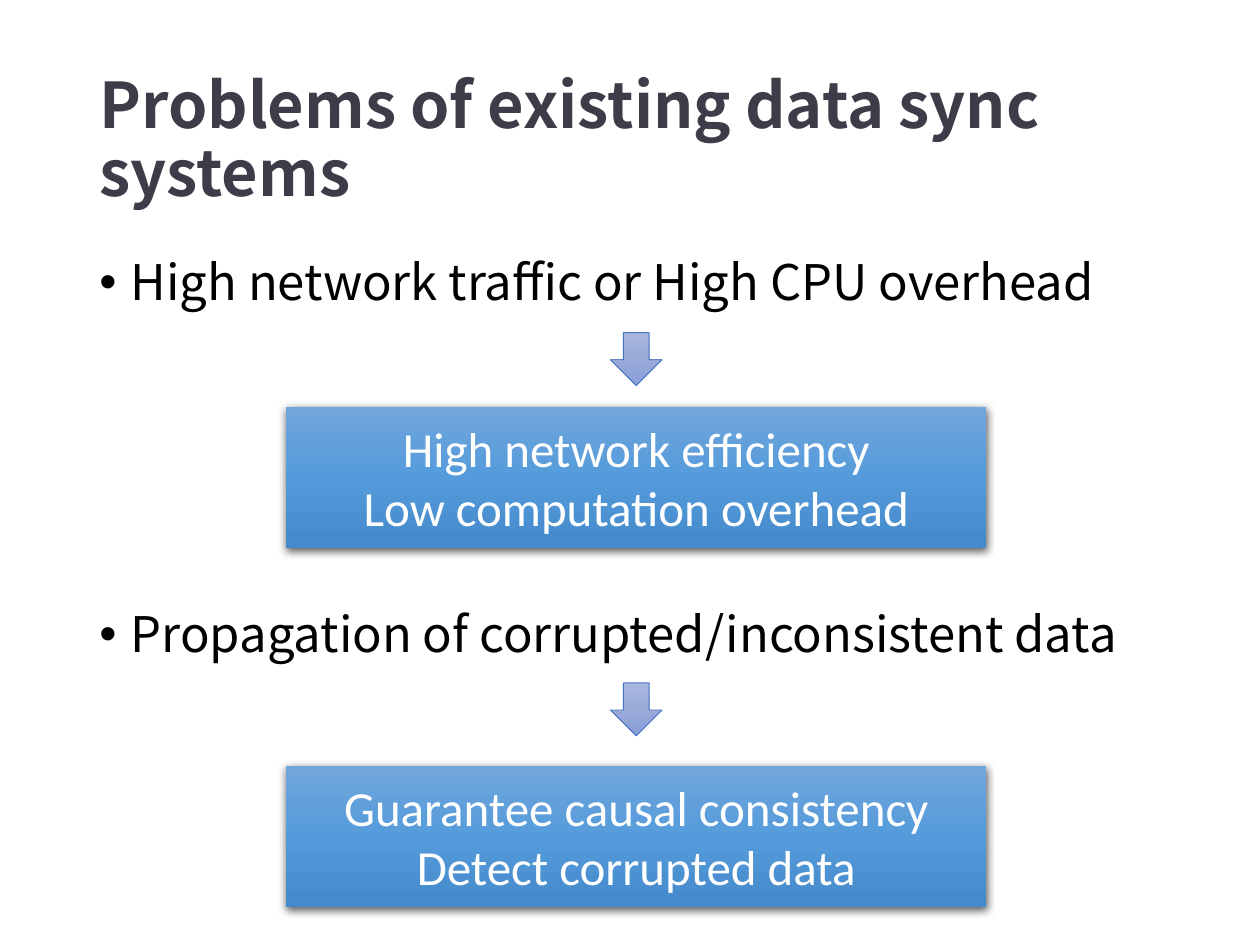
import copy

import pptx
import pptx.dml.color
import pptx.enum.shapes
import pptx.enum.text
import pptx.oxml
import pptx.oxml.ns
import pptx.util

Inches, Pt = pptx.util.Inches, pptx.util.Pt
SHAPE = pptx.enum.shapes.MSO_SHAPE
ANCHOR = pptx.enum.text.MSO_ANCHOR
qn = pptx.oxml.ns.qn
HEADING_FONT = "Noto Sans CJK SC"


def color(value):
    return pptx.dml.color.RGBColor.from_string(value)


def add_gradient_shape(kind, left, top, width, height, colors):
    """Add a shape with a three-stop gradient from top to bottom."""
    shape = page.shapes.add_shape(
        kind, Inches(left), Inches(top), Inches(width), Inches(height))
    shape.shadow.inherit = False
    shape.fill.gradient()
    shape.fill.gradient_angle = 270
    stop_list = shape._element.spPr.find(".//" + qn("a:gsLst"))
    stop_list.append(copy.deepcopy(stop_list[-1]))
    for index, stop in enumerate(shape.fill.gradient_stops):
        stop.position = index / 2
        stop.color.rgb = color(colors[index])
    return shape


deck = pptx.Presentation()
deck.slide_width, deck.slide_height = Inches(10), Inches(7.5)
page = deck.slides.add_slide(deck.slide_layouts[6])

margin, text_width = 0.69, 8.62
arrow_width, arrow_height = 0.41, 0.42
answer_left, answer_width, answer_height = 2.27, 5.56, 1.12
arrow_left = answer_left + (answer_width - arrow_width) / 2

# Title
box = page.shapes.add_textbox(
    Inches(margin), Inches(0.4), Inches(text_width), Inches(1.45))
box.text_frame.word_wrap = True
box.text_frame.vertical_anchor = ANCHOR.MIDDLE
para = box.text_frame.paragraphs[0]
para.text = "Problems of existing data sync systems"
para.line_spacing = 0.9
para.font.name, para.font.size, para.font.bold = HEADING_FONT, Pt(36), True
para.font.color.rgb = color("403B48")

# Each problem: bullet, arrow, answer
problems = [
    ("High network traffic or High CPU overhead", 2, 2.64, 3.23,
     ["High network efficiency", "Low computation overhead"]),
    ("Propagation of corrupted/inconsistent data", 4.79, 5.42, 6.08,
     ["Guarantee causal consistency", "Detect corrupted data"]),
]
for problem, bullet_top, arrow_top, answer_top, answers in problems:
    box = page.shapes.add_textbox(
        Inches(margin), Inches(bullet_top), Inches(text_width), Inches(0.6))
    box.text_frame.word_wrap = True
    para = box.text_frame.paragraphs[0]
    para.text = problem
    para.line_spacing = 0.9
    properties = para._p.get_or_add_pPr()
    properties.set("marL", str(Inches(0.25)))
    properties.set("indent", str(Inches(-0.25)))
    properties.append(pptx.oxml.parse_xml(
        f'<a:buFont {pptx.oxml.ns.nsdecls("a")} typeface="Arial"/>'))
    properties.append(pptx.oxml.parse_xml(
        f'<a:buChar {pptx.oxml.ns.nsdecls("a")} char="•"/>'))
    para.font.name, para.font.size = HEADING_FONT, Pt(28)
    para.font.color.rgb = color("000000")

    arrow = add_gradient_shape(
        SHAPE.DOWN_ARROW, arrow_left, arrow_top, arrow_width, arrow_height,
        ["A8B7DF", "9AABD9", "889ED7"])
    arrow.line.color.rgb = color("4472C4")
    arrow.line.width = Pt(0.5)

    answer = add_gradient_shape(
        SHAPE.RECTANGLE, answer_left, answer_top, answer_width, answer_height,
        ["71A6DB", "559BDB", "448ACA"])
    answer.line.fill.background()
    answer._element.spPr.find(qn("a:effectLst")).append(pptx.oxml.parse_xml(
        f'<a:outerShdw {pptx.oxml.ns.nsdecls("a")} blurRad="{Pt(4.5)}"'
        f' dist="{Pt(1.5)}" dir="5400000" algn="ctr" rotWithShape="0">'
        '<a:srgbClr val="000000"><a:alpha val="63000"/></a:srgbClr>'
        '</a:outerShdw>'))
    answer.text_frame.word_wrap = True
    answer.text_frame.vertical_anchor = ANCHOR.MIDDLE
    answer.text_frame.text = "\n".join(answers)
    for para in answer.text_frame.paragraphs:
        para.alignment = pptx.enum.text.PP_ALIGN.CENTER
        para.font.name, para.font.size = "Calibri", Pt(28)
        para.font.color.rgb = color("FFFFFF")

deck.save("out.pptx")
